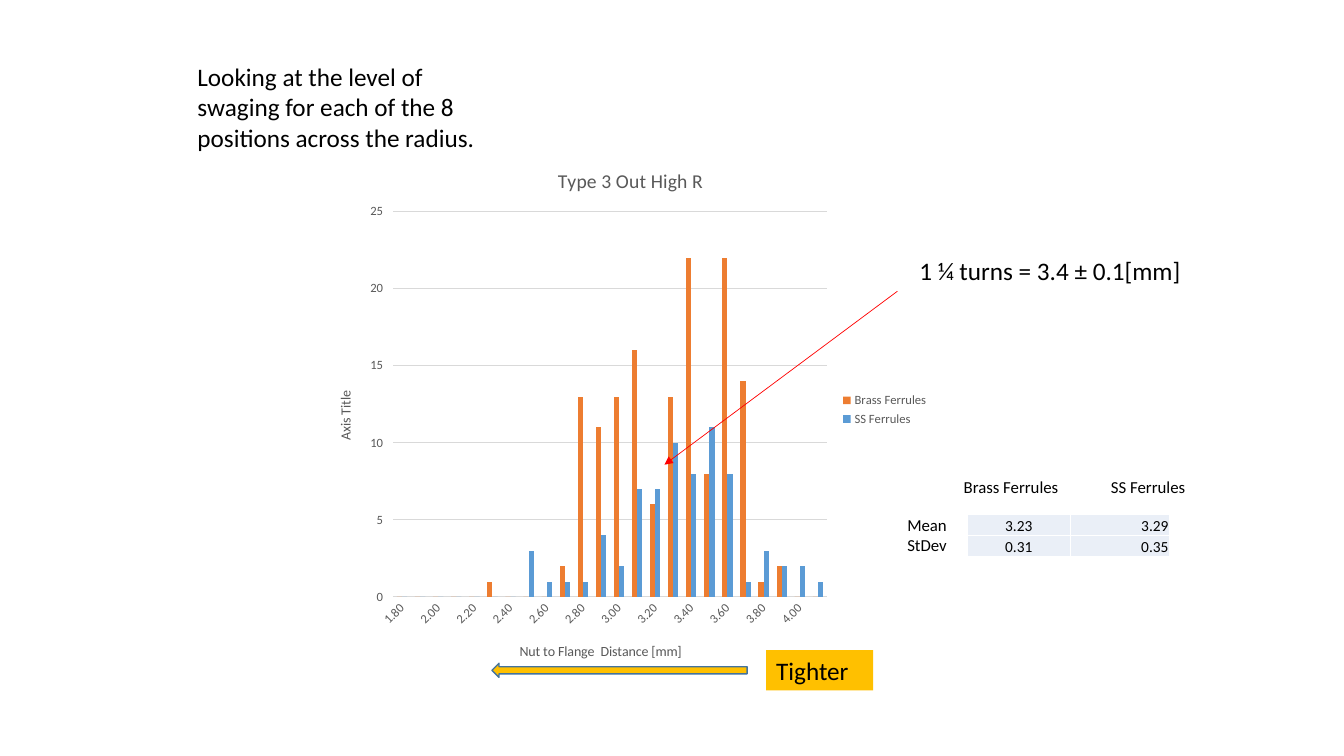
"""Build the slide on swaging level: histogram, statistics table and callouts."""
from lxml import etree
from pptx import Presentation
from pptx.chart.data import CategoryChartData
from pptx.dml.color import RGBColor
from pptx.enum.chart import XL_CHART_TYPE, XL_LEGEND_POSITION, XL_TICK_MARK
from pptx.enum.shapes import MSO_CONNECTOR, MSO_SHAPE
from pptx.enum.text import MSO_ANCHOR, PP_ALIGN
from pptx.oxml import parse_xml
from pptx.oxml.ns import nsdecls, qn
from pptx.util import Pt

PX = 9144
FONT = "Calibri"
BLACK = RGBColor(0x00, 0x00, 0x00)
GRAY = RGBColor(0x59, 0x59, 0x59)
GRID = RGBColor(0xD9, 0xD9, 0xD9)
ORANGE = RGBColor(0xED, 0x7D, 0x31)
BLUE = RGBColor(0x5B, 0x9B, 0xD5)
GOLD = RGBColor(0xFF, 0xC0, 0x00)
ARROW_EDGE = RGBColor(0x43, 0x73, 0x9E)
RED = RGBColor(0xFF, 0x00, 0x00)
CELL = RGBColor(0xEA, 0xEF, 0xF7)
COLUMNS = XL_CHART_TYPE.COLUMN_CLUSTERED
LEGEND_RIGHT = XL_LEGEND_POSITION.RIGHT
TICK_NONE, TICK_OUT = XL_TICK_MARK.NONE, XL_TICK_MARK.OUTSIDE
LEFT_ARROW = MSO_SHAPE.LEFT_ARROW
STRAIGHT = MSO_CONNECTOR.STRAIGHT
BOTTOM = MSO_ANCHOR.BOTTOM
CENTER, RIGHT = PP_ALIGN.CENTER, PP_ALIGN.RIGHT


def set_font(font, size, color):
    font.name = FONT
    font.size = Pt(size)
    font.bold = False
    font.color.rgb = color


def place(element, index, **settings):
    for old in element.findall(qn("c:layout")):
        element.remove(old)
    entries = "".join(f'<c:{name} val="{value}"/>' for name, value in settings.items())
    element.insert(index, parse_xml(
        f'<c:layout {nsdecls("c")}><c:manualLayout>{entries}</c:manualLayout></c:layout>'))


deck = Presentation()
deck.slide_width, deck.slide_height = 1333 * PX, 750 * PX
page = deck.slides.add_slide(deck.slide_layouts[6])
shapes = page.shapes

data = CategoryChartData(number_format="0")
data.categories = [tenths / 10 for tenths in range(18, 42)]
data.categories.number_format = "0.00"
data.add_series("Brass Ferrules", [0, 0, 0, 0, 0, 1, 0, 0, 0, 2, 13, 11,
                                   13, 16, 6, 13, 22, 8, 22, 14, 1, 2, 0, 0])
data.add_series("SS Ferrules", [0, 0, 0, 0, 0, 0, 0, 3, 1, 1, 1, 4,
                                2, 7, 7, 10, 8, 11, 8, 1, 3, 2, 2, 1])
chart = shapes.add_chart(COLUMNS, 316 * PX, 141 * PX, 615 * PX, 531 * PX, data).chart
set_font(chart.font, 10, BLACK)
chart.has_title = True
chart.has_legend = True
chart.legend.position = LEGEND_RIGHT
chart.legend.include_in_layout = False
set_font(chart.legend.font, 9, GRAY)

plot = chart.plots[0]
plot.gap_width = 150
plot.overlap = 0
plot.vary_by_categories = False
for series, color in zip(plot.series, (ORANGE, BLUE)):
    series.format.fill.solid()
    series.format.fill.fore_color.rgb = color

distance, count = chart.category_axis, chart.value_axis
for axis, tick in ((distance, TICK_NONE), (count, TICK_OUT)):
    axis.major_tick_mark = tick
    axis.minor_tick_mark = TICK_NONE
    axis.has_title = True
    set_font(axis.tick_labels.font, 9, GRAY)
distance.tick_labels.number_format = "0.00"
distance.tick_labels.number_format_is_linked = False
distance.format.line.color.rgb = GRID
distance.format.line.width = Pt(0.75)
distance._element.find(qn("c:txPr")).find(qn("a:bodyPr")).set("rot", "-2700000")
count.minimum_scale, count.maximum_scale, count.major_unit = 0, 25, 5
count.format.line.fill.background()
count.major_gridlines.format.line.color.rgb = GRID
count.major_gridlines.format.line.width = Pt(0.75)

for title, text, size in ((chart.chart_title, "Type 3 Out High R", 14),
                          (distance.axis_title, "Nut to Flange  Distance [mm]", 10),
                          (count.axis_title, "Axis Title", 10)):
    title.text_frame.text = text
    set_font(title.text_frame.paragraphs[0].font, size, GRAY)
count.axis_title.text_frame._txBody.find(qn("a:bodyPr")).set("rot", "-5400000")
place(chart.chart_title._element, 1, xMode="edge", yMode="edge", x=0.38, y=0.04)
place(distance.axis_title._element, 1, xMode="edge", yMode="edge", x=0.32, y=0.93)
place(plot._element.getparent(), 0, layoutTarget="inner", xMode="edge", yMode="edge",
      x=0.12, y=0.13, w=0.7, h=0.72)

table = shapes.add_table(2, 2, 959 * PX, 510 * PX, 201 * PX, 42 * PX).table
table.first_row = table.horz_banding = False
for column, width in zip(table.columns, (103, 98)):
    column.width = width * PX
for row, values in enumerate((("3.23", "3.29"), ("0.31", "0.35"))):
    table.rows[row].height = 21 * PX
    for col, (value, align) in enumerate(zip(values, (CENTER, RIGHT))):
        cell = table.cell(row, col)
        cell.margin_left = cell.margin_right = cell.margin_top = PX
        cell.margin_bottom = 0
        cell.vertical_anchor = BOTTOM
        for side in ("lnL", "lnR", "lnT", "lnB"):
            cell._tc.tcPr.append(parse_xml(
                f'<a:{side} {nsdecls("a")} w="12700"><a:solidFill>'
                f'<a:srgbClr val="FFFFFF"/></a:solidFill></a:{side}>'))
        cell.fill.solid()
        cell.fill.fore_color.rgb = CELL
        cell.text = value
        para = cell.text_frame.paragraphs[0]
        para.alignment = align
        set_font(para.font, 11, BLACK)

direction = shapes.add_shape(LEFT_ARROW, 488 * PX, 658 * PX, 253 * PX, 14 * PX)
direction.shadow.inherit = False
direction.fill.solid()
direction.fill.fore_color.rgb = GOLD
direction.line.color.rgb = ARROW_EDGE
direction.line.width = Pt(1)

for left, top, width, height, size, fill, text in (
    (186, 56, 314, 101, 18, None,
     "Looking at the level of swaging for each of the 8 positions across the radius."),
    (946, 468, 140, 30, 12, None, "Brass Ferrules"),
    (1092, 468, 115, 30, 12, None, "SS Ferrules"),
    (890, 506, 81, 50, 12, None, "Mean\nStDev"),
    (760, 645, 106, 40, 18, GOLD, "Tighter"),
    (902, 248, 317, 40, 18, None, "1 ¼ turns = 3.4 ± 0.1[mm]"),
):
    box = shapes.add_textbox(left * PX, top * PX, width * PX, height * PX)
    box.text_frame.word_wrap = True
    box.text_frame.text = text
    for para in box.text_frame.paragraphs:
        set_font(para.font, size, BLACK)
    if fill:
        box.fill.solid()
        box.fill.fore_color.rgb = fill

pointer = shapes.add_connector(STRAIGHT, 890 * PX, 289 * PX, 659 * PX, 461 * PX)
pointer.line.color.rgb = RED
pointer.line.width = Pt(0.5)
etree.SubElement(pointer.line._get_or_add_ln(), qn("a:tailEnd"), type="triangle")
etree.SubElement(pointer._element.spPr, qn("a:effectLst"))

deck.save("out.pptx")
